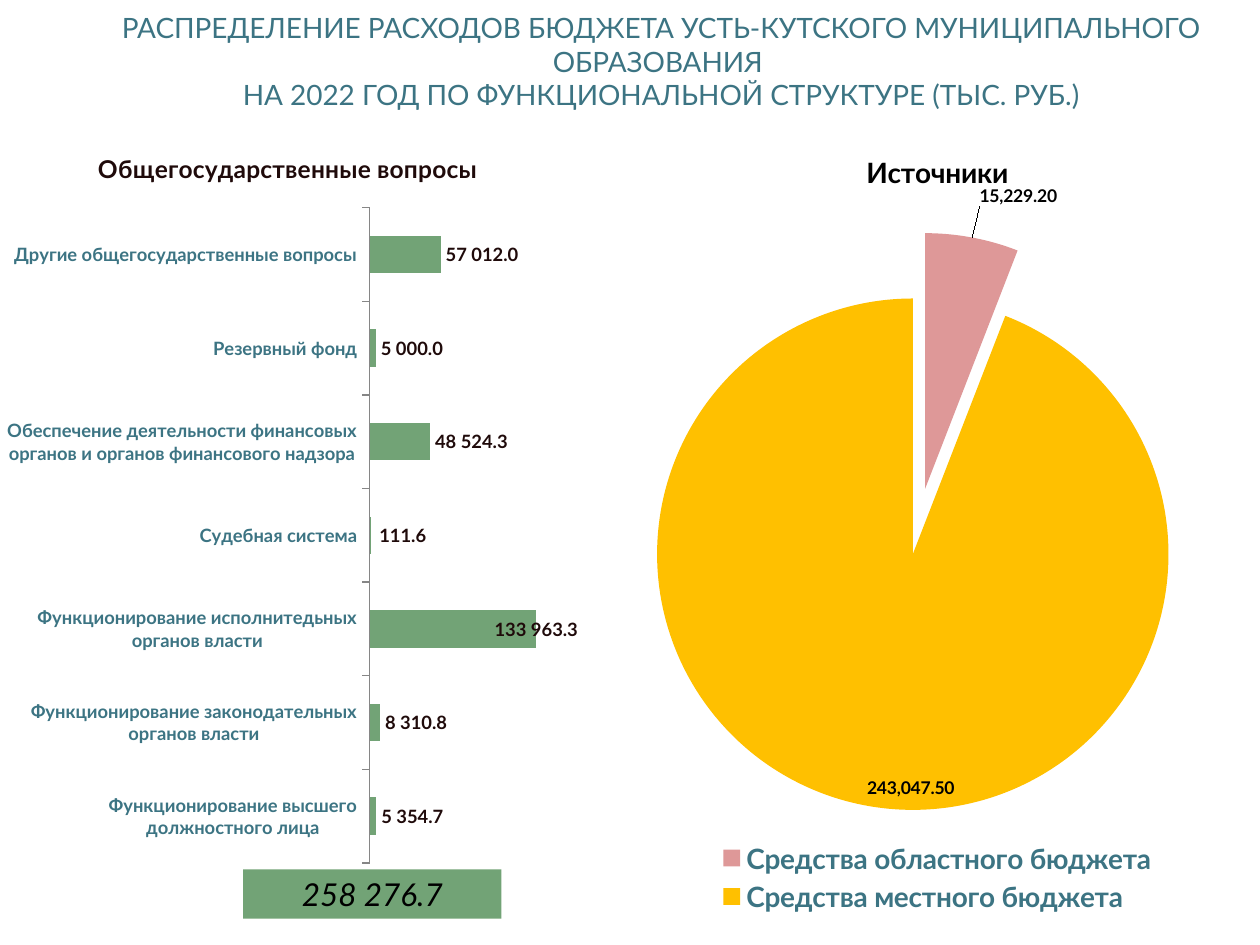
from lxml import etree
from pptx import Presentation
from pptx.chart.data import CategoryChartData
from pptx.dml.color import RGBColor
from pptx.enum.chart import (XL_CHART_TYPE, XL_LABEL_POSITION, XL_LEGEND_POSITION,
                             XL_TICK_LABEL_POSITION, XL_TICK_MARK)
from pptx.enum.shapes import MSO_SHAPE
from pptx.enum.text import MSO_ANCHOR, PP_ALIGN
from pptx.oxml.ns import qn
from pptx.util import Inches, Pt

BAR, PIE = XL_CHART_TYPE.BAR_CLUSTERED, XL_CHART_TYPE.PIE
OUTSIDE, INSIDE = XL_LABEL_POSITION.OUTSIDE_END, XL_LABEL_POSITION.INSIDE_END
FONT = "Lato"
TEAL, GREEN, DARK, BLACK = "3C7483", "72A376", "1F0A0A", "000000"

HEADING = ["РАСПРЕДЕЛЕНИЕ РАСХОДОВ БЮДЖЕТА УСТЬ-КУТСКОГО МУНИЦИПАЛЬНОГО ОБРАЗОВАНИЯ ",
           "НА 2022 ГОД ПО ФУНКЦИОНАЛЬНОЙ СТРУКТУРЕ (ТЫС. РУБ.)"]
TOTAL = "258 276.7"
EXPENSES_TITLE = "Общегосударственные вопросы"
EXPENSES = [
    ("Функционирование высшего должностного лица", 5354.7),
    ("Функционирование законодательных органов власти", 8310.8),
    ("Функционирование исполнитедьных органов власти", 133963.3),
    ("Судебная система", 111.6),
    ("Обеспечение деятельности финансовых органов и органов финансового надзора", 48524.3),
    ("Резервный фонд", 5000),
    ("Другие общегосударственные вопросы", 57012),
]
SOURCES_TITLE = "Источники"
SOURCES = [("Средства областного бюджета", 15229.2), ("Средства местного бюджета", 243047.5)]
SOURCE_COLORS = ["DE9898", "FFC000"]
EXPENSES_FORMAT, SOURCES_FORMAT = r"#\ ##0.0", "#,##0.00"


def rgb(value):
    return RGBColor.from_string(value)


def style(font, size, color, bold=False, italic=False):
    font.name, font.size, font.bold, font.italic = FONT, Pt(size), bold, italic
    font.color.rgb = rgb(color)


def paint(target, color):
    target.fill.solid()
    target.fill.fore_color.rgb = rgb(color)


def write(shape, lines, size, color, italic=False):
    frame = shape.text_frame
    frame.word_wrap = True
    frame.vertical_anchor = MSO_ANCHOR.MIDDLE
    para = frame.paragraphs[0]
    para.alignment = PP_ALIGN.CENTER
    for number, line in enumerate(lines):
        if number:
            para.add_line_break()
        span = para.add_run()
        span.text = line
        style(span.font, size, color, italic=italic)


def manual_layout(**settings):
    layout = etree.Element(qn("c:layout"))
    manual = etree.SubElement(layout, qn("c:manualLayout"))
    for name, value in settings.items():
        etree.SubElement(manual, qn("c:" + name)).set("val", str(value))
    return layout


def place_plot(chart, x, y, w, h):
    """Fix the inner plot area, in fractions of the chart."""
    area = chart.plots[0]._element.getparent()
    for old in area.findall(qn("c:layout")):
        area.remove(old)
    area.insert(0, manual_layout(layoutTarget="inner", xMode="edge", yMode="edge",
                                 x=x, y=y, w=w, h=h))


def add_chart(slide, kind, place, title, rows, title_size, title_color):
    data = CategoryChartData()
    data.categories = [name for name, _ in rows]
    data.add_series(title, [value for _, value in rows])
    chart = slide.shapes.add_chart(kind, *map(Inches, place), data).chart
    style(chart.font, 18, BLACK)
    chart.has_title = True
    span = chart.chart_title.text_frame.paragraphs[0].add_run()
    span.text = title
    style(span.font, title_size, title_color, bold=True)
    chart.chart_title.include_in_layout = False
    return chart


def label_series(series, size, color, number_format, position):
    labels = series.data_labels
    labels.show_value = True
    labels.number_format, labels.number_format_is_linked = number_format, False
    labels.position = position
    style(labels.font, size, color, bold=True)


def shift_label(series, index, size, color, number_format, dx, dy):
    """Move one outside label by fractions of the chart."""
    label = series.points[index].data_label
    style(label.font, size, color, bold=True)
    label.position = OUTSIDE
    element = series.data_labels._element.find(qn("c:dLbl"))
    element.insert(1, manual_layout(x=dx, y=dy))
    number = etree.Element(qn("c:numFmt"), formatCode=number_format, sourceLinked="0")
    element.insert(2, number)


def add_expenses(slide):
    chart = add_chart(slide, BAR, (-0.04, 0.99, 4.65, 5.98), EXPENSES_TITLE, EXPENSES, 14, DARK)
    chart.has_legend = False
    place_plot(chart, 0.64, 0.11, 0.34, 0.87)
    plot = chart.plots[0]
    plot.gap_width = 150
    plot.vary_by_categories = False
    series = plot.series[0]
    paint(series.format, GREEN)
    label_series(series, 10.5, DARK, EXPENSES_FORMAT, OUTSIDE)
    shift_label(series, 2, 10.5, DARK, EXPENSES_FORMAT, -0.08, 0)
    names, values = chart.category_axis, chart.value_axis
    style(names.tick_labels.font, 10.5, TEAL, bold=True)
    names.major_tick_mark = XL_TICK_MARK.OUTSIDE
    names.tick_label_position = XL_TICK_LABEL_POSITION.LOW
    names.format.line.color.rgb = rgb("868686")
    values.has_major_gridlines = False
    values.visible = False
    values.minimum_scale, values.maximum_scale = 0, 160000


def add_sources(slide):
    chart = add_chart(slide, PIE, (5, 0.99, 4.88, 6.3), SOURCES_TITLE, SOURCES, 16, BLACK)
    place_plot(chart, 0, 0, 0.94, 1)
    chart.has_legend = True
    chart.legend.position = XL_LEGEND_POSITION.BOTTOM
    chart.legend.include_in_layout = False
    style(chart.legend.font, 16, TEAL, bold=True)
    plot = chart.plots[0]
    plot.vary_by_categories = True
    series = plot.series[0]
    for index, color in enumerate(SOURCE_COLORS):
        paint(series.points[index].format, color)
    explosion = etree.Element(qn("c:explosion"), val="13")
    series._element.find(qn("c:dPt")).addprevious(explosion)
    label_series(series, 10, BLACK, SOURCES_FORMAT, INSIDE)
    shift_label(series, 0, 10, BLACK, SOURCES_FORMAT, 0.01, -0.03)


def main():
    deck = Presentation()
    deck.slide_width, deck.slide_height = Inches(10), Inches(7.5)
    slide = deck.slides.add_slide(deck.slide_layouts[6])
    heading = slide.shapes.add_textbox(*map(Inches, (0.5, 0.13, 9.5, 0.71)))
    write(heading, HEADING, 16, TEAL)
    add_expenses(slide)
    total = slide.shapes.add_shape(MSO_SHAPE.RECTANGLE, *map(Inches, (1.93, 6.9, 2.05, 0.39)))
    total.shadow.inherit = False
    paint(total, GREEN)
    total.line.fill.background()
    write(total, [TOTAL], 18, BLACK, italic=True)
    add_sources(slide)
    deck.save("out.pptx")


if __name__ == "__main__":
    main()
